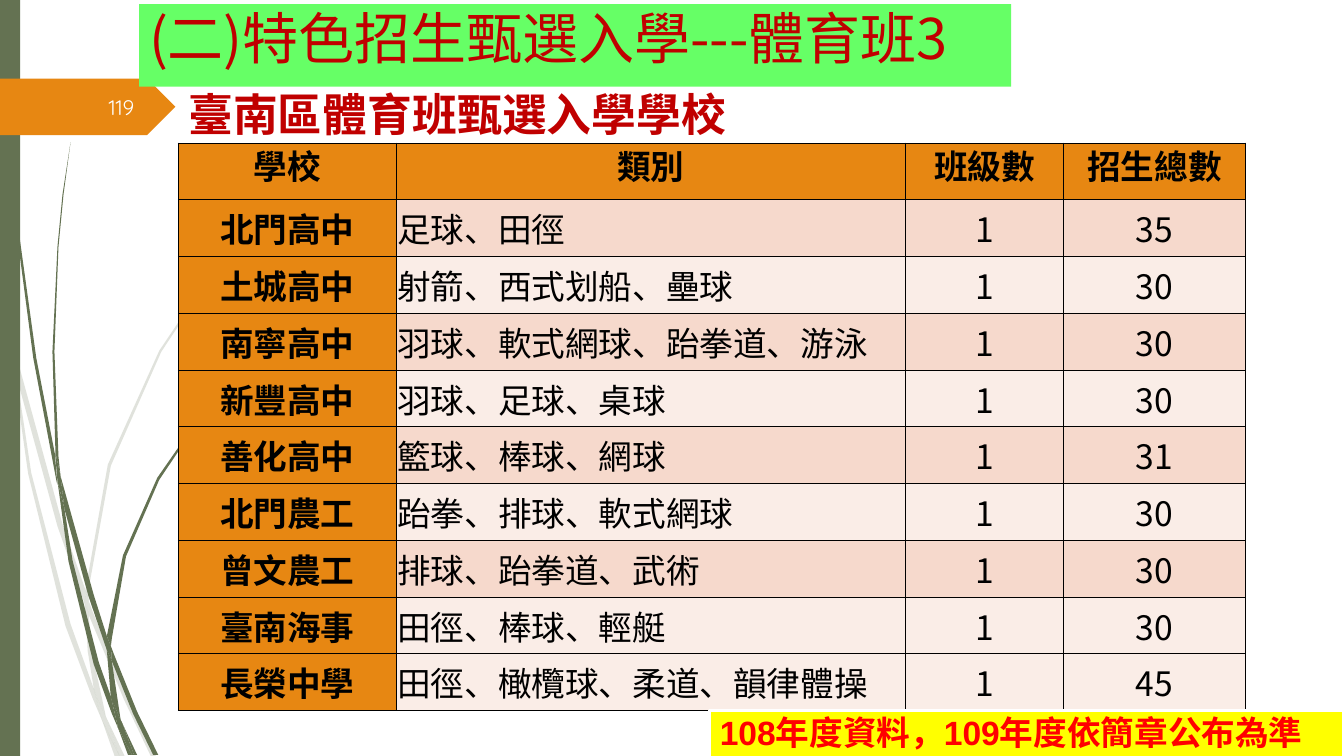
from lxml.etree import SubElement
from pptx import Presentation
from pptx.dml.color import RGBColor
from pptx.enum.shapes import MSO_SHAPE as Shape
from pptx.enum.text import MSO_ANCHOR as Anchor, PP_ALIGN as Align
from pptx.oxml.ns import qn
from pptx.util import Inches, Pt

CJK = "Noto Sans CJK SC"
GREEN, ORANGE, RED = "647252", "E78712", "C00000"
ROW_FILLS = ["F6D9CC", "FAEDE7"]
HUNDREDTH = 9144  # EMU in a hundredth of an inch

# Grass outlines as x, y pairs in hundredths of an inch
PALE_GRASS = [
    [11, 350, 8, 322, 0, 282, 0, 299, 10, 344],
    [57, 522, 84, 599, 85, 586, 62, 520, 14, 345, 17, 376],
    [92, 607, 88, 596, 88, 610, 123, 694, 150, 751, 155, 751, 127, 692],
    [119, 751, 124, 751, 105, 711],
    [93, 683, 70, 619, 31, 469, 17, 376, 11, 350, 28, 470, 65, 621, 92, 693,
     101, 714, 99, 707],
    [84, 599, 87, 646, 93, 683, 96, 692, 105, 711, 104, 706, 91, 646, 88, 610,
     88, 608],
    [88, 584, 110, 462, 160, 349, 229, 245, 268, 198, 290, 175, 312, 153,
     289, 175, 268, 197, 228, 244, 158, 348, 107, 461, 85, 584, 85, 586, 88, 596],
    [101, 714, 114, 751, 119, 751],
    [88, 608, 88, 610, 88, 596, 85, 586, 84, 599],
    [96, 692, 93, 683, 99, 707, 101, 714, 119, 751, 105, 711],
]
DARK_GRASS = [
    [7, 110, 17, 233, 33, 355, 56, 477, 57, 481, 55, 457, 55, 453, 36, 355,
     19, 232, 8, 109, 5, 48, 3, 0, 3, 48],
    [88, 592, 106, 645, 106, 631, 93, 590, 60, 472, 64, 505],
    [113, 649, 110, 641, 111, 656, 132, 708, 152, 749, 157, 749, 136, 706],
    [110, 691, 98, 657, 72, 556, 64, 505, 57, 477, 68, 557, 93, 659, 111, 708,
     117, 722, 116, 717],
    [60, 472, 58, 453, 54, 349, 58, 245, 63, 193, 70, 141, 62, 193, 57, 245,
     52, 349, 55, 449],
    [133, 749, 136, 749, 122, 719],
    [57, 477, 64, 505, 60, 472, 55, 449, 55, 453],
    [111, 633, 125, 552, 158, 476, 205, 406, 231, 374, 246, 359, 261, 344,
     260, 344, 245, 358, 231, 373, 204, 405, 156, 474, 122, 551, 106, 631, 110, 641],
    [117, 722, 127, 749, 131, 749],
    [106, 645, 110, 692, 116, 706, 122, 719, 120, 716, 111, 656, 109, 651],
    [106, 645, 109, 651, 111, 656, 110, 641, 106, 631],
    [116, 706, 110, 691, 116, 717, 117, 722, 131, 749, 133, 749, 122, 719],
]

COLUMN_WIDTHS = [2.16, 5.05, 1.57, 1.8]
HEADINGS = ["學校", "類別", "班級數", "招生總數"]
SCHOOLS = [
    ("北門高中", "足球、田徑", 1, 35),
    ("土城高中", "射箭、西式划船、壘球", 1, 30),
    ("南寧高中", "羽球、軟式網球、跆拳道、游泳", 1, 30),
    ("新豐高中", "羽球、足球、桌球", 1, 30),
    ("善化高中", "籃球、棒球、網球", 1, 31),
    ("北門農工", "跆拳、排球、軟式網球", 1, 30),
    ("曾文農工", "排球、跆拳道、武術", 1, 30),
    ("臺南海事", "田徑、棒球、輕艇", 1, 30),
    ("長榮中學", "田徑、橄欖球、柔道、韻律體操", 1, 45),
]


def color(hex_string):
    return RGBColor.from_string(hex_string)


def paint(shape, fill, line=None):
    shape.shadow.inherit = False
    shape.fill.solid()
    shape.fill.fore_color.rgb = color(fill)
    if line:
        shape.line.color.rgb = color(line)
        shape.line.width = Pt(2.25)
    else:
        shape.line.fill.background()


def write(text_frame, text, size, ink, name=CJK, bold=False, align=Align.LEFT,
          spacing=None):
    """Set one paragraph, with the CJK face for East Asian letters."""
    text_frame.text = text
    paragraph = text_frame.paragraphs[0]
    paragraph.alignment = align
    paragraph.line_spacing = spacing
    font = paragraph.runs[0].font
    font.size, font.bold, font.name = Pt(size), bold, name
    font.color.rgb = color(ink)
    SubElement(font._element, qn("a:ea")).set("typeface", CJK)


def add_block(slide, box, kind, fill, line=None):
    block = slide.shapes.add_shape(kind, *map(Inches, box))
    paint(block, fill, line)
    return block


def add_label(shape, text, size, ink, top=0.05, right=0.1, anchor=Anchor.TOP,
              **style):
    frame = shape.text_frame
    frame.word_wrap = True
    frame.vertical_anchor = anchor
    frame.margin_top, frame.margin_right = Inches(top), Inches(right)
    write(frame, text, size, ink, **style)


def add_grass(slide, blades, opacity):
    for blade in blades:
        points = list(zip(blade[::2], blade[1::2]))
        builder = slide.shapes.build_freeform(*points[0], scale=HUNDREDTH)
        builder.add_line_segments(points[1:], close=True)
        shape = builder.convert_to_shape()
        paint(shape, GREEN)
        if opacity < 100:
            tint = shape.fill._xPr.find(".//" + qn("a:srgbClr"))
            SubElement(tint, qn("a:alpha")).set("val", str(opacity * 1000))


def add_margin(slide, height):
    add_grass(slide, PALE_GRASS, 20)
    add_grass(slide, DARK_GRASS, 100)
    add_block(slide, (0, 0, 0.2, height), Shape.RECTANGLE, GREEN)
    add_block(slide, (0, 0.78, 1.74, 0.56), Shape.PENTAGON, ORANGE)


def border(cell):
    properties = cell._tc.get_or_add_tcPr()
    for index, side in enumerate(("lnL", "lnR", "lnT", "lnB")):
        line = properties.makeelement(qn("a:" + side), {"w": str(Pt(1))})
        fill = SubElement(line, qn("a:solidFill"))
        SubElement(fill, qn("a:srgbClr")).set("val", "000000")
        properties.insert(index, line)


def add_school_table(slide, left, top, height):
    rows = [HEADINGS] + SCHOOLS
    table = slide.shapes.add_table(
        len(rows), len(HEADINGS), Inches(left), Inches(top),
        Inches(sum(COLUMN_WIDTHS)), Inches(height)).table
    for column, width in zip(table.columns, COLUMN_WIDTHS):
        column.width = Inches(width)
    for r, values in enumerate(rows):
        band = ROW_FILLS[1 if r == len(SCHOOLS) else (r - 1) % 2]
        for c, value in enumerate(values):
            cell = table.cell(r, c)
            heading = r == 0 or c == 0
            cell.fill.solid()
            cell.fill.fore_color.rgb = color(ORANGE if heading else band)
            border(cell)
            cell.vertical_anchor = Anchor.MIDDLE
            cell.margin_left = cell.margin_right = Inches(0.01)
            cell.margin_top = cell.margin_bottom = 0
            write(cell.text_frame, str(value), 24, "000000", bold=heading,
                  align=Align.LEFT if c == 1 and r else Align.CENTER,
                  spacing=None if r else Pt(25))


def add_titles(slide):
    banner = add_block(slide, (1.38, 0.04, 8.65, 0.82), Shape.RECTANGLE, "66FF66")
    add_label(banner, "(二)特色招生甄選入學---體育班3", 40, RED, top=0.11,
              right=0.2, spacing=0.82)
    number = slide.shapes.add_textbox(*map(Inches, (0.58, 0.86, 0.85, 0.4)))
    add_label(number, "119", 15, "FEFFFF", anchor=Anchor.MIDDLE,
              name="Quicksand", align=Align.RIGHT)
    title = slide.shapes.add_textbox(*map(Inches, (1.77, 0.85, 10.23, 1.4)))
    add_label(title, "臺南區體育班甄選入學學校", 32, RED, top=0.1, bold=True,
              spacing=0.82)


def add_footnote(slide, box):
    note = add_block(slide, box, Shape.RECTANGLE, "FFFF00", "FFFFFF")
    add_label(note, "108年度資料，109年度依簡章公布為準", 24, "FF0000", top=0.08,
              name="Arial", bold=True, spacing=0.82)


def main():
    presentation = Presentation()
    presentation.slide_width, presentation.slide_height = Inches(13.33), Inches(7.5)
    slide = presentation.slides.add_slide(presentation.slide_layouts[6])
    add_margin(slide, 7.5)
    add_school_table(slide, 1.77, 1.42, 5.63)
    add_titles(slide)
    add_footnote(slide, (7.04, 7.05, 6.29, 0.5))
    presentation.save("out.pptx")


if __name__ == "__main__":
    main()
